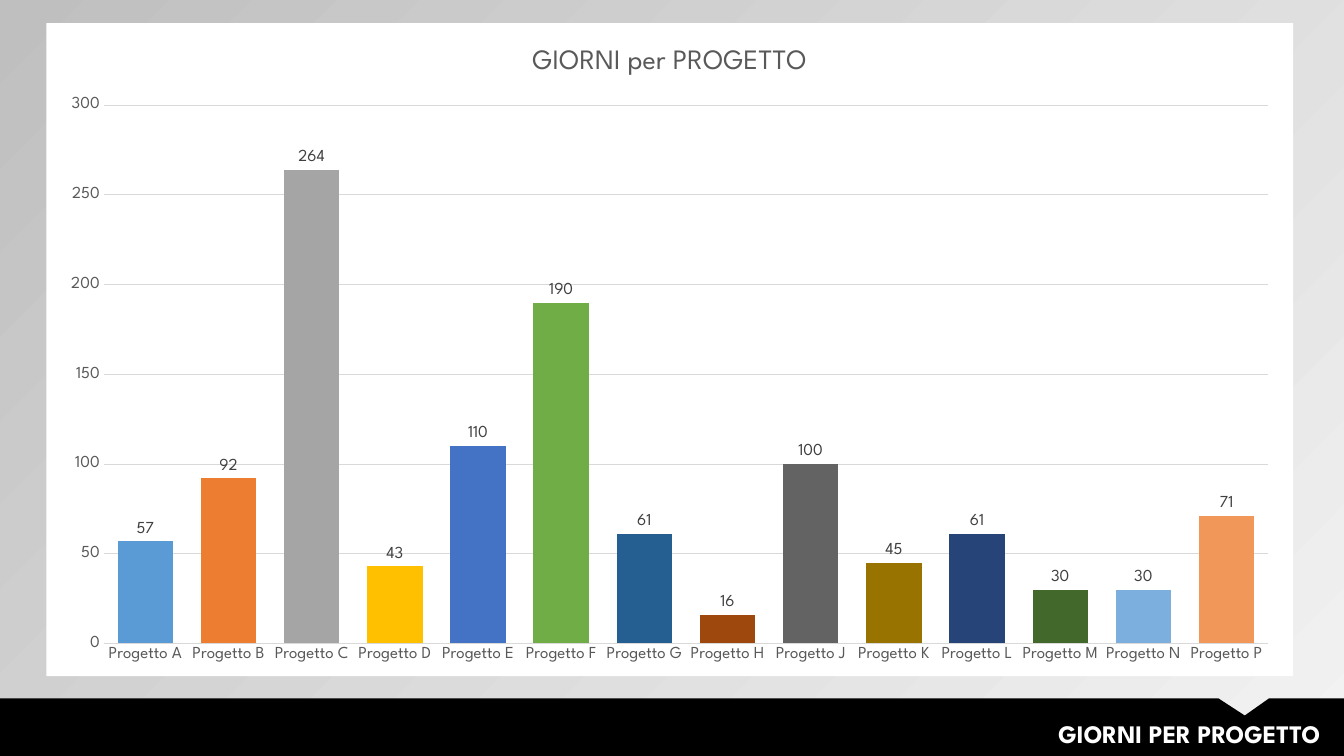
import pptx
import pptx.chart.data
import pptx.dml.color
import pptx.enum.chart
import pptx.enum.text
import pptx.oxml
import pptx.oxml.ns
import pptx.util

Cm = pptx.util.Cm
Pt = pptx.util.Pt
RGBColor = pptx.dml.color.RGBColor

FONT = "League Spartan"
WHITE = RGBColor(0xFF, 0xFF, 0xFF)
BLACK = RGBColor(0x00, 0x00, 0x00)
LIGHT_GREY = RGBColor(0xF2, 0xF2, 0xF2)
MID_GREY = RGBColor(0xBF, 0xBF, 0xBF)
GRID_GREY = RGBColor(0xD9, 0xD9, 0xD9)
AXIS_GREY = RGBColor(0x59, 0x59, 0x59)
LABEL_GREY = RGBColor(0x40, 0x40, 0x40)

SLIDE_WIDTH, SLIDE_HEIGHT = 33.87, 19.05
BANNER_TOP = 17.6

# Project letter, days, bar colour
PROJECTS = [
    ("A", 57, RGBColor(0x5B, 0x9B, 0xD5)),
    ("B", 92, RGBColor(0xED, 0x7D, 0x31)),
    ("C", 264, RGBColor(0xA5, 0xA5, 0xA5)),
    ("D", 43, RGBColor(0xFF, 0xC0, 0x00)),
    ("E", 110, RGBColor(0x44, 0x72, 0xC4)),
    ("F", 190, RGBColor(0x70, 0xAD, 0x47)),
    ("G", 61, RGBColor(0x25, 0x5E, 0x91)),
    ("H", 16, RGBColor(0x9E, 0x48, 0x0E)),
    ("J", 100, RGBColor(0x63, 0x63, 0x63)),
    ("K", 45, RGBColor(0x99, 0x73, 0x00)),
    ("L", 61, RGBColor(0x26, 0x44, 0x78)),
    ("M", 30, RGBColor(0x43, 0x68, 0x2B)),
    ("N", 30, RGBColor(0x7C, 0xAF, 0xDD)),
    ("P", 71, RGBColor(0xF1, 0x97, 0x5A)),
]


def format_font(font, size, color, bold=False):
    font.name = FONT
    font.size = Pt(size)
    font.bold = bold
    font.color.rgb = color


def write_text(frame, text, size, color, bold=False, alignment=None):
    paragraph = frame.paragraphs[0]
    paragraph.alignment = alignment
    run = paragraph.add_run()
    run.text = text
    format_font(run.font, size, color, bold)


def set_background(slide):
    fill = slide.background.fill
    fill.gradient()
    fill.gradient_angle = 135
    for stop, color, position in zip(fill.gradient_stops, (LIGHT_GREY, MID_GREY), (0, 1)):
        stop.color.rgb = color
        stop.position = position


def add_banner(slide):
    points = [(12.09 * 2.54, BANNER_TOP), (31.37, 18.03), (31.98, BANNER_TOP),
              (SLIDE_WIDTH, BANNER_TOP), (SLIDE_WIDTH, SLIDE_HEIGHT), (0, SLIDE_HEIGHT)]
    builder = slide.shapes.build_freeform(Cm(0), Cm(BANNER_TOP))
    builder.add_line_segments([(Cm(x), Cm(y)) for x, y in points], close=True)
    shape = builder.convert_to_shape()
    shape.shadow.inherit = False
    shape.fill.solid()
    shape.fill.fore_color.rgb = BLACK
    shape.line.fill.background()
    return shape


def set_title(slide, text):
    title = slide.shapes.title
    title.left, title.top, title.width, title.height = Cm(10.52), Cm(17.98), Cm(23.01), Cm(1.02)
    frame = title.text_frame
    frame.word_wrap = True
    frame.auto_size = pptx.enum.text.MSO_AUTO_SIZE.NONE
    frame.vertical_anchor = pptx.enum.text.MSO_ANCHOR.MIDDLE
    write_text(frame, text, 18, WHITE, bold=True, alignment=pptx.enum.text.PP_ALIGN.RIGHT)
    return title


def format_axis(axis):
    axis.major_tick_mark = pptx.enum.chart.XL_TICK_MARK.NONE
    axis.minor_tick_mark = pptx.enum.chart.XL_TICK_MARK.NONE
    format_font(axis.tick_labels.font, 12, AXIS_GREY)


def format_line(line):
    line.color.rgb = GRID_GREY
    line.width = Pt(0.75)


def fill_chart_area(chart, color):
    area = pptx.oxml.parse_xml(
        f'<c:spPr {pptx.oxml.ns.nsdecls("c", "a")}><a:solidFill><a:srgbClr val="{color}"/>'
        '</a:solidFill><a:ln><a:noFill/></a:ln></c:spPr>')
    chart.element.find(pptx.oxml.ns.qn("c:chart")).addnext(area)


def place_plot(chart, **fractions):
    values = "".join(f'<c:{key} val="{value}"/>' for key, value in fractions.items())
    layout = pptx.oxml.parse_xml(
        f'<c:layout {pptx.oxml.ns.nsdecls("c")}><c:manualLayout><c:layoutTarget val="inner"/>'
        f'<c:xMode val="edge"/><c:yMode val="edge"/>{values}</c:manualLayout></c:layout>')
    plot_area = chart.element.find(".//" + pptx.oxml.ns.qn("c:plotArea"))
    for previous in plot_area.findall(pptx.oxml.ns.qn("c:layout")):
        plot_area.remove(previous)
    plot_area.insert(0, layout)


def add_days_chart(slide):
    data = pptx.chart.data.CategoryChartData()
    data.categories = [f"Progetto {letter}" for letter, days, color in PROJECTS]
    data.add_series("Giorni", [days for letter, days, color in PROJECTS])
    chart = slide.shapes.add_chart(
        pptx.enum.chart.XL_CHART_TYPE.COLUMN_CLUSTERED,
        Cm(1.17), Cm(0.58), Cm(31.42), Cm(16.46), data).chart
    format_font(chart.font, 10, BLACK)
    chart.has_legend = False
    chart.has_title = True
    write_text(chart.chart_title.text_frame, "GIORNI per PROGETTO", 20, AXIS_GREY)
    fill_chart_area(chart, WHITE)
    place_plot(chart, x=0.046, y=0.126, w=0.934, h=0.824)

    # Axes
    format_axis(chart.category_axis)
    format_line(chart.category_axis.format.line)
    value_axis = chart.value_axis
    format_axis(value_axis)
    value_axis.format.line.fill.background()
    value_axis.minimum_scale, value_axis.maximum_scale, value_axis.major_unit = 0, 300, 50
    value_axis.has_major_gridlines = True
    format_line(value_axis.major_gridlines.format.line)

    # Bars and their values
    plot = chart.plots[0]
    plot.gap_width = 50
    plot.vary_by_categories = False
    series = plot.series[0]
    for index, (letter, days, color) in enumerate(PROJECTS):
        fill = series.points[index].format.fill
        fill.solid()
        fill.fore_color.rgb = color
    labels = series.data_labels
    labels.show_value = True
    labels.position = pptx.enum.chart.XL_LABEL_POSITION.OUTSIDE_END
    format_font(labels.font, 12, LABEL_GREY)


def main():
    presentation = pptx.Presentation()
    presentation.slide_width = Cm(SLIDE_WIDTH)
    presentation.slide_height = Cm(SLIDE_HEIGHT)
    slide = presentation.slides.add_slide(presentation.slide_layouts[5])
    set_background(slide)

    # Banner behind the title
    banner = add_banner(slide)
    title = set_title(slide, "GIORNI PER PROGETTO")
    title.element.addprevious(banner.element)

    add_days_chart(slide)
    presentation.save("out.pptx")


if __name__ == "__main__":
    main()
